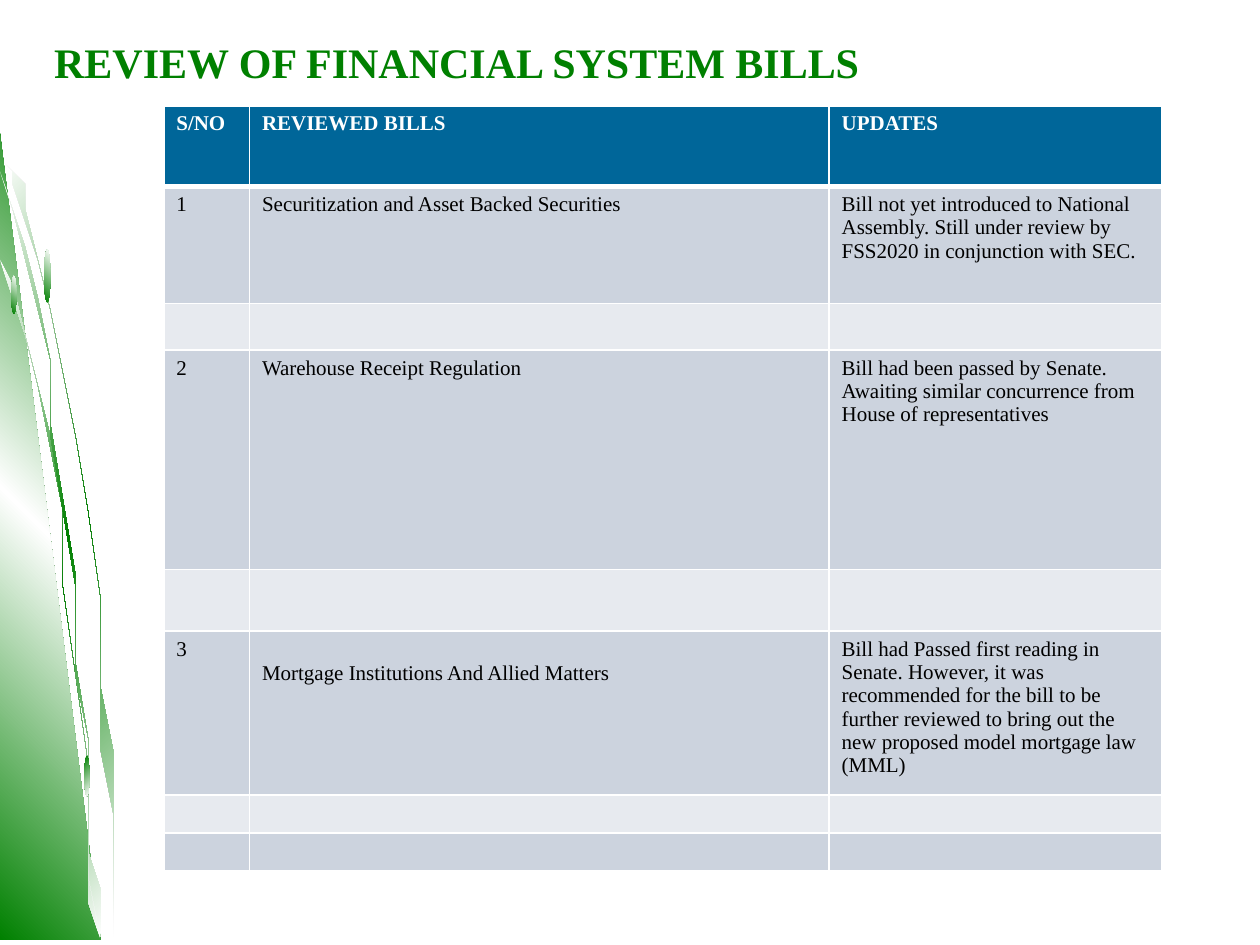
from lxml import etree
from pptx import Presentation
from pptx import util as u
from pptx.enum import shapes, text
from pptx.dml.color import RGBColor
from pptx.oxml import ns

COLUMNS, ROWS = 100, 75
CELL = u.Inches(10) // COLUMNS
FONT = "Times New Roman"
COLOURS = {
    "green": "008000", "white": "FFFFFF", "black": "000000",
    "header": "006699", "dark band": "CCD3DE", "light band": "E7EAEF",
}

# Boxes are left, top, width, height in grid cells
TITLE_BOX = (4.3, 2.9, 88.3, 7.6)
GRASS_BOX = (0, 10.6, 9.4, 64.4)
TABLE_BOX = (13, 8.4, 79.2, 59.7)

BLADE = [(8.1, 64.4), (0, 64.4), (0, 0)]
# Each stem runs down its outer edge and back up its inner edge
OUTER_STEM = [
    (0, 1.7), (0.7, 2.8), (1.5, 4), (2.5, 6.5), (3.4, 10), (4.4, 14), (5.3, 18.7),
    (6.1, 24.2), (6.9, 30.2), (7.6, 36.8), (8.2, 44.1), (8.6, 49.1), (8.9, 54.1),
    (9.1, 59.1), (9.4, 64.3), (9.3, 64.3), (9.1, 59.1), (8.8, 54.1), (8.5, 49.1),
    (8.1, 44.3), (7.5, 37), (6.8, 30.4), (6.1, 24.4), (5.3, 19.2), (4.4, 14.4),
    (3.4, 10.2), (2.5, 6.9), (1.4, 4.4), (0.7, 3.2), (0, 2.1),
]
LOWER_STEM = [
    (0, 9.6), (1, 12.3), (2, 15.6), (3, 19.8), (3.8, 24.4), (4.7, 29.8), (5.4, 35.8),
    (6.1, 42.6), (6.7, 49.7), (7.2, 57), (7.5, 60.5), (7.6, 64.3), (7.4, 60.9),
    (7.2, 57.3), (6.7, 50), (6.1, 42.9), (5.4, 36.2), (4.6, 30.1), (3.8, 24.7),
    (2.9, 20.2), (2, 16), (1, 12.7), (0, 10),
]
UPPER_STEM = [
    (0, 3), (1, 5.7), (1.9, 9.2), (2.8, 13.1), (3.6, 17.9), (4.4, 23.1), (5.1, 29.1),
    (5.8, 35.3), (6.4, 42.4), (6.8, 47.6), (7.1, 53.1), (7.4, 58.6), (7.6, 64.3),
    (7.4, 59), (7.1, 53.4), (6.7, 48), (6.4, 42.7), (5.7, 35.6), (5.1, 29.5),
    (4.4, 23.5), (3.6, 18.3), (2.8, 13.5), (1.9, 9.6), (0.9, 6), (0, 3.4),
]
BUDS = [(0.9, 11.3, 0.4, 3, 315), (6.7, 49.4, 0.4, 3.2, 45), (3.5, 9.2, 0.5, 4.2, 315)]

COLUMN_WIDTHS = [6.8, 46, 26.4]
ROW_HEIGHTS = [6.4, 9.3, 3.7, 17.4, 4.9, 12.2, 2.9, 2.9]
BLANK = ["", "", ""]
BILLS = [
    ["S/NO", "REVIEWED BILLS", "UPDATES"],
    ["1", "Securitization and Asset Backed Securities",
     "Bill not yet introduced to National Assembly. Still under review by "
     "FSS2020 in conjunction with SEC."],
    BLANK,
    ["2", "Warehouse Receipt Regulation",
     "Bill had been passed by Senate. Awaiting similar concurrence from "
     "House of representatives"],
    BLANK,
    ["3", "Mortgage Institutions And Allied Matters",
     "Bill had Passed first reading in Senate. However, it was recommended for "
     "the bill to be further reviewed to bring out the new proposed model "
     "mortgage law (MML)"],
    BLANK,
    BLANK,
]
LOWERED_CELL = (5, 1)  # its text starts one line down


def cells(*lengths):
    return [u.Emu(round(length * CELL)) for length in lengths]


def colour(name):
    return RGBColor.from_string(COLOURS[name])


def write(paragraph, words, size, ink, bold):
    span = paragraph.add_run()
    span.text = words
    formats = {"name": FONT, "size": u.Pt(size), "bold": bold}
    for key, value in formats.items():
        setattr(span.font, key, value)
    span.font.color.rgb = colour(ink)


def paint_gradient(shape, names, angle):
    """Fill with evenly spaced colours, angle in degrees clockwise."""
    shape.shadow.inherit = False
    shape.line.fill.background()
    shape.fill.gradient()
    gradient = shape.fill._xPr.find(ns.qn("a:gradFill"))
    for child in list(gradient):
        gradient.remove(child)
    stops = etree.SubElement(gradient, ns.qn("a:gsLst"))
    for index, name in enumerate(names):
        place = str(100000 * index // (len(names) - 1))
        stop = etree.SubElement(stops, ns.qn("a:gs"), pos=place)
        etree.SubElement(stop, ns.qn("a:srgbClr"), val=COLOURS[name])
    etree.SubElement(gradient, ns.qn("a:lin"), ang=str(angle * 60000), scaled="0")


def add_grass(page, box):
    left, top = box[:2]
    pale_ends = ["white", "green", "white"]
    outlines = [
        (OUTER_STEM, pale_ends, 45),
        (BLADE, ["green", "white", "green"], 315),
        (LOWER_STEM, pale_ends, 45),
        (UPPER_STEM, pale_ends, 45),
    ]
    for points, names, angle in outlines:
        builder = page.shapes.build_freeform(*points[0], scale=CELL)
        builder.add_line_segments(points[1:], close=True)
        paint_gradient(builder.convert_to_shape(*cells(left, top)), names, angle)
    for x, y, width, height, angle in BUDS:
        bud = page.shapes.add_shape(
            shapes.MSO_SHAPE.OVAL, *cells(left + x, top + y, width, height))
        paint_gradient(bud, ["green", "white"], angle)


def add_title(page, box):
    frame = page.shapes.add_textbox(*cells(*box)).text_frame
    formats = {"word_wrap": True, "vertical_anchor": text.MSO_ANCHOR.TOP,
               "margin_left": 0, "margin_top": 0, "margin_right": 0, "margin_bottom": 0}
    for key, value in formats.items():
        setattr(frame, key, value)
    write(frame.paragraphs[0], "REVIEW OF FINANCIAL SYSTEM BILLS", 24, "green", True)


def add_borders(cell, bottom):
    properties = cell._tc.get_or_add_tcPr()
    for side, points in {"L": 1, "R": 1, "T": 1, "B": bottom}.items():
        line = etree.SubElement(properties, ns.qn(f"a:ln{side}"), w=str(u.Pt(points)))
        fill = etree.SubElement(line, ns.qn("a:solidFill"))
        etree.SubElement(fill, ns.qn("a:srgbClr"), val=COLOURS["white"])


def add_bills_table(page, box):
    table = page.shapes.add_table(len(BILLS), len(COLUMN_WIDTHS), *cells(*box)).table
    table.first_row = table.horz_banding = False
    for column, width in zip(table.columns, cells(*COLUMN_WIDTHS)):
        column.width = width
    for row, height in zip(table.rows, cells(*ROW_HEIGHTS)):
        row.height = height
    for r, bill in enumerate(BILLS):
        heading = r == 0
        band = "header" if heading else "dark band" if r % 2 else "light band"
        for c, words in enumerate(bill):
            cell = table.cell(r, c)
            add_borders(cell, 3 if heading else 1)
            cell.fill.solid()
            cell.fill.fore_color.rgb = colour(band)
            paragraph = cell.text_frame.paragraphs[0]
            if words:
                write(paragraph, words, 12, "white" if heading else "black", heading)
            else:
                end = etree.SubElement(paragraph._p, ns.qn("a:endParaRPr"), sz="1200")
                etree.SubElement(end, ns.qn("a:latin"), typeface=FONT)
    table.cell(*LOWERED_CELL).margin_top = u.Inches(0.24)


def main():
    deck = Presentation()
    deck.slide_width, deck.slide_height = cells(COLUMNS, ROWS)
    page = deck.slides.add_slide(deck.slide_layouts[6])
    add_grass(page, GRASS_BOX)
    add_title(page, TITLE_BOX)
    add_bills_table(page, TABLE_BOX)
    deck.save("out.pptx")


if __name__ == "__main__":
    main()
